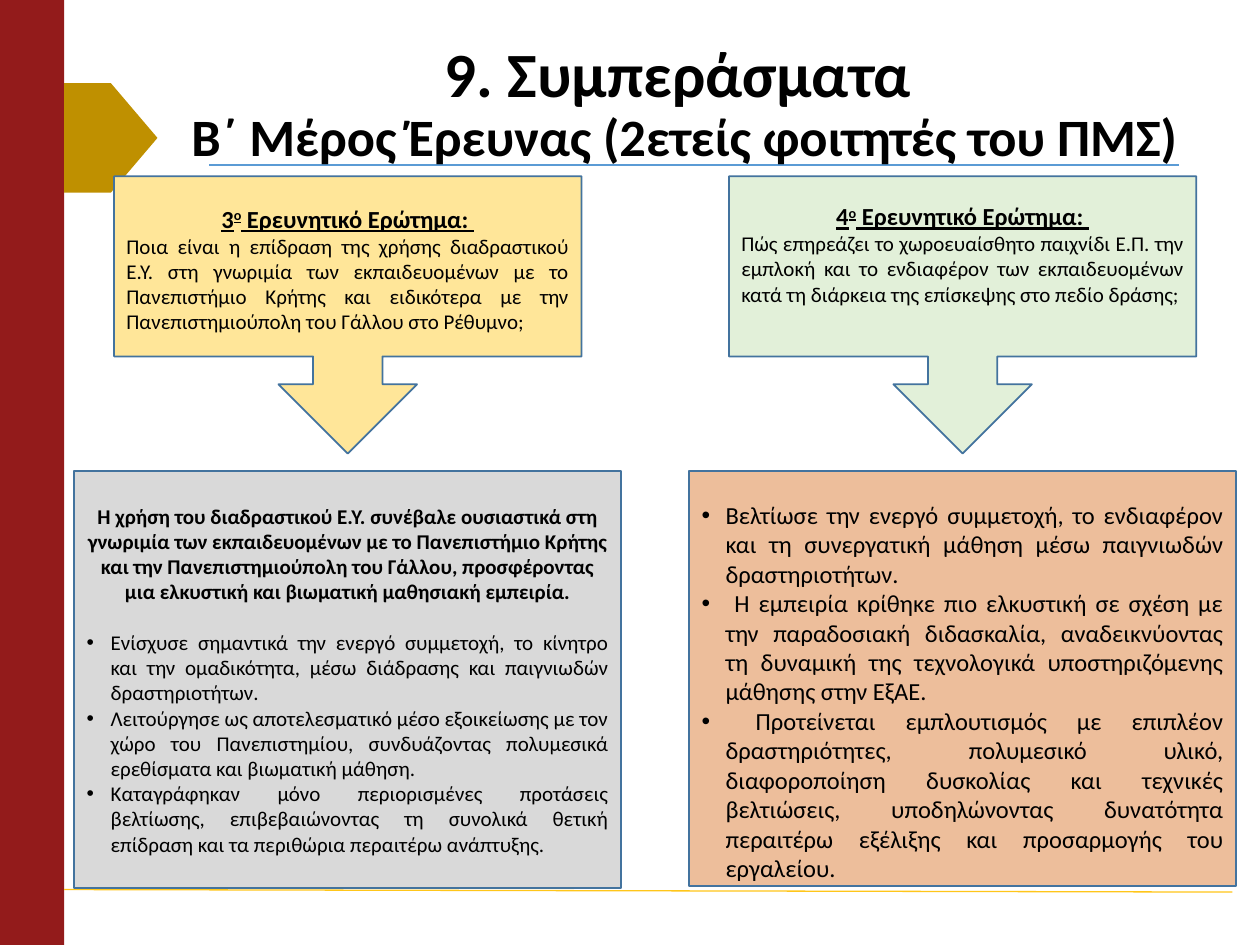
from dataclasses import dataclass

from lxml.etree import SubElement
from pptx import Presentation
from pptx.dml.color import RGBColor
from pptx.enum.shapes import MSO_CONNECTOR as Connector, MSO_SHAPE as Shape
from pptx.enum.text import MSO_ANCHOR as Anchor, PP_ALIGN as Align
from pptx.oxml.ns import qn
from pptx.util import Inches, Pt

FONT = "Calibri"
BLACK = RGBColor(0x00, 0x00, 0x00)
DARK_RED = RGBColor(0x93, 0x1B, 0x1B)
GOLD = RGBColor(0xBF, 0x90, 0x00)
BLUE = RGBColor(0x5B, 0x9B, 0xD5)
AMBER = RGBColor(0xFF, 0xC6, 0x1A)
BORDER = RGBColor(0x43, 0x73, 0x9E)
YELLOW = RGBColor(0xFF, 0xE6, 0x99)
GREEN = RGBColor(0xE2, 0xF0, 0xD9)
GREY = RGBColor(0xD9, 0xD9, 0xD9)
PEACH = RGBColor(0xED, 0xBE, 0x9B)

COLUMN_LEFT, COLUMN_STEP = 0.59, 4.88
ANSWER_WIDTH, QUESTION_WIDTH = 4.34, 3.71
QUESTION_INDENT = (ANSWER_WIDTH - QUESTION_WIDTH) / 2
INSET = 0.05


@dataclass
class Column:
    """A research question above its findings."""
    number: str
    question: str
    question_fill: RGBColor
    question_insets: tuple[float, float]
    findings: list[str]
    finding_size: int
    answer_fill: RGBColor
    answer_height: float
    answer_insets: tuple[float, float]
    summary: str = ""


COLUMNS = [
    Column(
        number="3",
        question="Ποια είναι η επίδραση της χρήσης διαδραστικού Ε.Υ. στη γνωριμία των "
                 "εκπαιδευομένων με το Πανεπιστήμιο Κρήτης και ειδικότερα με την "
                 "Πανεπιστημιούπολη του Γάλλου στο Ρέθυμνο;",
        question_fill=YELLOW,
        question_insets=(INSET + 0.24, INSET + 0.2),
        summary="Η χρήση του διαδραστικού Ε.Υ. συνέβαλε ουσιαστικά στη γνωριμία των "
                "εκπαιδευομένων με το Πανεπιστήμιο Κρήτης και την Πανεπιστημιούπολη του "
                "Γάλλου, προσφέροντας μια ελκυστική και βιωματική μαθησιακή εμπειρία.",
        findings=[
            "Ενίσχυσε σημαντικά την ενεργό συμμετοχή, το κίνητρο και την ομαδικότητα, "
            "μέσω διάδρασης και παιγνιωδών δραστηριοτήτων.",
            "Λειτούργησε ως αποτελεσματικό μέσο εξοικείωσης με τον χώρο του Πανεπιστημίου, "
            "συνδυάζοντας πολυμεσικά ερεθίσματα και βιωματική μάθηση.",
            "Καταγράφηκαν μόνο περιορισμένες προτάσεις βελτίωσης, επιβεβαιώνοντας τη "
            "συνολικά θετική επίδραση και τα περιθώρια περαιτέρω ανάπτυξης.",
        ],
        finding_size=12,
        answer_fill=GREY,
        answer_height=3.31,
        answer_insets=(INSET, INSET),
    ),
    Column(
        number="4",
        question="Πώς επηρεάζει το χωροευαίσθητο παιχνίδι Ε.Π. την εμπλοκή και το ενδιαφέρον "
                 "των εκπαιδευομένων κατά τη διάρκεια της επίσκεψης στο πεδίο δράσης;",
        question_fill=GREEN,
        question_insets=(INSET, INSET + 0.2),
        findings=[
            "Βελτίωσε την ενεργό συμμετοχή, το ενδιαφέρον και τη συνεργατική μάθηση μέσω "
            "παιγνιωδών δραστηριοτήτων.",
            " Η εμπειρία κρίθηκε πιο ελκυστική σε σχέση με την παραδοσιακή διδασκαλία, "
            "αναδεικνύοντας τη δυναμική της τεχνολογικά υποστηριζόμενης μάθησης στην ΕξΑΕ.",
            " Προτείνεται εμπλουτισμός με επιπλέον δραστηριότητες, πολυμεσικό υλικό, "
            "διαφοροποίηση δυσκολίας και τεχνικές βελτιώσεις, υποδηλώνοντας δυνατότητα "
            "περαιτέρω εξέλιξης και προσαρμογής του εργαλείου.",
        ],
        finding_size=14,
        answer_fill=PEACH,
        answer_height=3.29,
        answer_insets=(INSET + 0.2, INSET),
    ),
]


def add_box(page, kind: Shape, left: float, top: float, width: float, height: float,
            fill: RGBColor, line: RGBColor | None = None):
    box = page.shapes.add_shape(kind, Inches(left), Inches(top), Inches(width), Inches(height))
    box.shadow.inherit = False
    box.fill.solid()
    box.fill.fore_color.rgb = fill
    if line is None:
        box.line.fill.background()
    else:
        box.line.color.rgb = line
        box.line.width = Pt(1)
    return box


def add_rule(page, start: tuple[float, float], end: tuple[float, float], color: RGBColor) -> None:
    rule = page.shapes.add_connector(Connector.STRAIGHT, *map(Inches, start + end))
    rule.line.color.rgb = color
    rule.line.width = Pt(0.75)
    SubElement(rule._element.spPr, qn("a:effectLst"))


def set_frame(box, insets: tuple[float, float] = (INSET, INSET)):
    frame = box.text_frame
    frame.word_wrap = True
    frame.vertical_anchor = Anchor.MIDDLE
    frame.margin_top, frame.margin_bottom = map(Inches, insets)
    return frame


def add_para(frame, align: Align):
    first = frame.paragraphs[0]
    para = frame.add_paragraph() if first.runs else first
    para.alignment = align
    return para


def add_span(para, text: str, *, size: int, bold: bool = False,
             underline: bool = False, baseline: int = 0) -> None:
    span = para.add_run()
    span.text = text
    font = span.font
    font.name, font.size, font.bold, font.underline = FONT, Pt(size), bold, underline
    font.color.rgb = BLACK
    if baseline:
        font._element.set("baseline", str(baseline * 1000))


def set_bullet(para) -> None:
    properties = para._p.get_or_add_pPr()
    properties.set("marL", str(Inches(0.19)))
    properties.set("indent", str(-Inches(0.19)))
    SubElement(properties, qn("a:buFont")).set("typeface", "Arial")
    SubElement(properties, qn("a:buChar")).set("char", "•")


def draw_title(page) -> None:
    box = page.shapes.add_textbox(Inches(1.38), Inches(0.6), Inches(8.11), Inches(0.47))
    para = add_para(set_frame(box), Align.CENTER)
    para.line_spacing = 0.9
    add_span(para, "9. Συμπεράσματα ", size=36, bold=True)
    para.add_line_break()
    add_span(para, "Β΄ Μέρος Έρευνας (2ετείς φοιτητές του ΠΜΣ)", size=30, bold=True)


def draw_column(page, column: Column, left: float) -> None:
    # Findings
    box = add_box(page, Shape.RECTANGLE, left, 3.74, ANSWER_WIDTH, column.answer_height,
                  column.answer_fill, BORDER)
    frame = set_frame(box, column.answer_insets)
    if column.summary:
        para = add_para(frame, Align.CENTER)
        para.space_after = Pt(14.65)
        add_span(para, column.summary, size=12, bold=True)
    for finding in column.findings:
        para = add_para(frame, Align.JUSTIFY)
        set_bullet(para)
        add_span(para, finding, size=column.finding_size)

    # Research question
    box = add_box(page, Shape.DOWN_ARROW_CALLOUT, left + QUESTION_INDENT, 1.4,
                  QUESTION_WIDTH, 2.2, column.question_fill, BORDER)
    frame = set_frame(box, column.question_insets)
    heading = add_para(frame, Align.CENTER)
    for text, baseline in ((column.number, 0), ("ο", 30), (" Ερευνητικό Ερώτημα: ", 0)):
        add_span(heading, text, size=14, bold=True, underline=True, baseline=baseline)
    add_span(add_para(frame, Align.JUSTIFY), column.question, size=12)


def main() -> None:
    deck = Presentation()
    deck.slide_width, deck.slide_height = Inches(10), Inches(7.5)
    page = deck.slides.add_slide(deck.slide_layouts[6])

    # Side band, rules and marker
    add_box(page, Shape.RECTANGLE, 0, 0, 0.51, 7.5, DARK_RED)
    add_rule(page, (1.66, 1.31), (9.36, 1.31), BLUE)
    add_rule(page, (0.51, 7.06), (9.78, 7.08), AMBER)
    add_box(page, Shape.PENTAGON, 0.51, 0.66, 0.74, 0.87, GOLD)

    draw_title(page)
    for index, column in enumerate(COLUMNS):
        draw_column(page, column, COLUMN_LEFT + index * COLUMN_STEP)

    deck.save("out.pptx")


if __name__ == "__main__":
    main()
